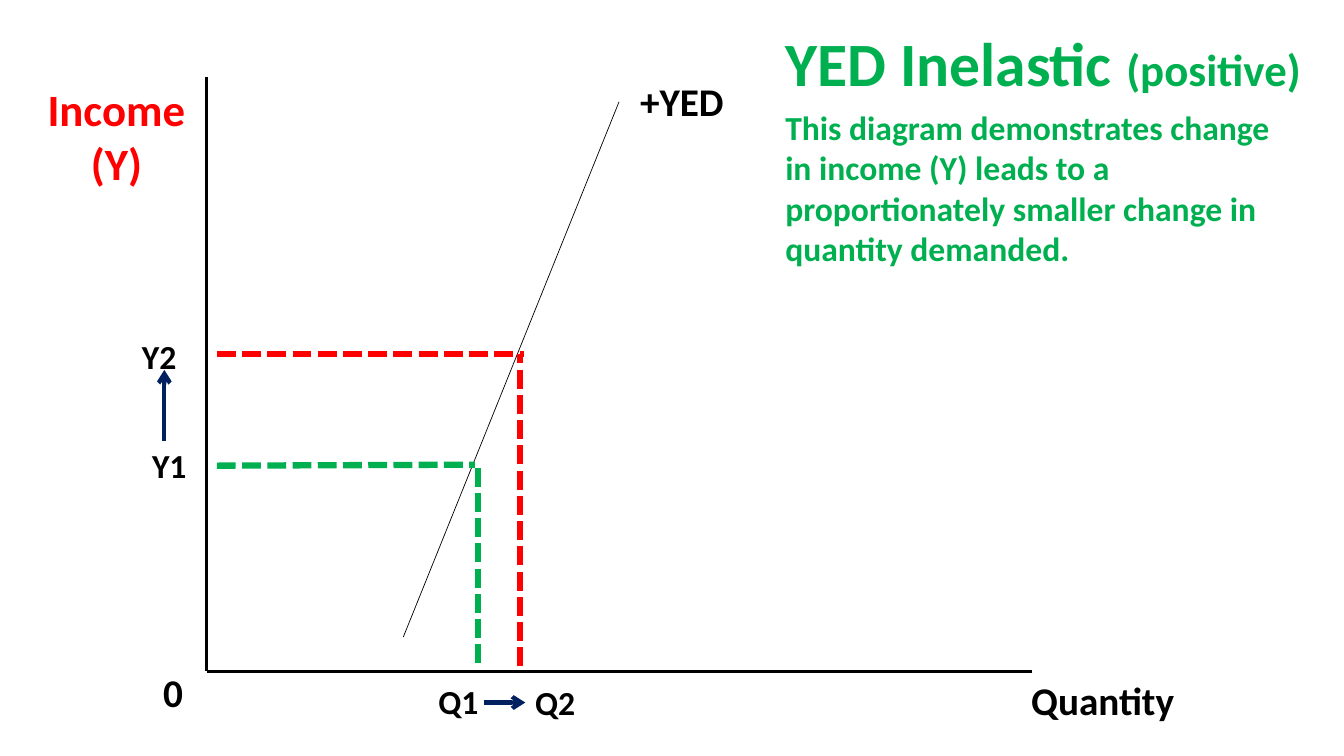
from lxml import etree
from pptx import Presentation
from pptx.dml.color import RGBColor
from pptx.enum.dml import MSO_LINE
from pptx.enum.shapes import MSO_CONNECTOR
from pptx.enum.text import MSO_ANCHOR, PP_ALIGN
from pptx.oxml.ns import qn
from pptx.util import Inches, Pt

STRAIGHT = MSO_CONNECTOR.STRAIGHT
DASHED = MSO_LINE.SQUARE_DOT
LEFT, CENTER = PP_ALIGN.LEFT, PP_ALIGN.CENTER
TOP = MSO_ANCHOR.TOP
FONT = "Calibri"
COLORS = {"black": "000000", "red": "FF0000", "green": "00B050", "navy": "002060"}


def rgb(name):
    """Return the named colour."""
    return RGBColor.from_string(COLORS[name])


def set_font(font, size, color):
    """Apply the bold slide font."""
    font.name = FONT
    font.size = Pt(size)
    font.bold = True
    font.color.rgb = rgb(color)


def add_label(s, text, box, size, color="black", align=LEFT):
    """Add a wrapped text box."""
    tf = s.shapes.add_textbox(*map(Inches, box)).text_frame
    tf.word_wrap = True
    p = tf.paragraphs[0]
    p.text = text
    p.alignment = align
    set_font(p.font, size, color)


def add_line(s, start, end, color, width, dash=None, arrow=False):
    """Add a straight line, optionally dashed or with an arrowhead."""
    line = s.shapes.add_connector(STRAIGHT, *map(Inches, start + end))
    line.line.color.rgb = rgb(color)
    line.line.width = Pt(width)
    if dash:
        line.line.dash_style = dash
    if arrow:
        etree.SubElement(line.line._get_or_add_ln(), qn("a:tailEnd"), type="arrow")
    etree.SubElement(line._element.spPr, qn("a:effectLst"))


def add_title(s, parts, box, color):
    """Place the title and fill it with runs of differing size."""
    title = s.shapes.title
    title.left, title.top, title.width, title.height = map(Inches, box)
    tf = title.text_frame
    tf.word_wrap = True
    tf.vertical_anchor = TOP
    p = tf.paragraphs[0]
    p.alignment = LEFT
    p.line_spacing = 0.9
    for text, size in parts:
        r = p.add_run()
        r.text = text
        set_font(r.font, size, color)


def main():
    """Build the income elasticity slide."""
    prs = Presentation()
    prs.slide_width, prs.slide_height = Inches(13.33), Inches(7.5)
    s = prs.slides.add_slide(prs.slide_layouts[5])

    origin = (2.05, 6.66)
    add_line(s, (2.05, 0.76), origin, "black", 2.5)
    add_line(s, (10.24, 6.66), origin, "black", 2.5)
    add_label(s, "Income\n(Y)", (0.37, 0.76, 1.57, 1.18), 32, "red", CENTER)
    add_label(s, "Quantity", (10.13, 6.66, 2.94, 0.57), 28)
    add_label(s, "0", (1.52, 6.58, 0.42, 0.57), 28)

    add_line(s, (6.14, 1.01), (4, 6.32), "black", 0.5)
    add_label(s, "+YED", (6.25, 0.72, 1.37, 0.57), 28)

    guides = [
        ((2.15, 4.62), (4.71, 4.61), "green"),
        ((2.15, 3.51), (5.2, 3.51), "red"),
        ((5.16, 6.61), (5.16, 3.51), "red"),
        ((4.74, 6.58), (4.74, 4.62), "green"),
    ]
    for start, end, color in guides:
        add_line(s, start, end, color, 4.5, dash=DASHED)

    ticks = [
        ("Y2", 1.31, 3.28, 0.84),
        ("Y1", 1.41, 4.36, 0.63),
        ("Q2", 5.21, 6.72, 0.84),
        ("Q1", 4.25, 6.71, 0.76),
    ]
    for text, left, top, width in ticks:
        add_label(s, text, (left, top, width, 0.5), 24)

    add_line(s, (1.63, 4.38), (1.63, 3.67), "navy", 3, arrow=True)
    add_line(s, (4.8, 6.97), (5.21, 6.97), "navy", 3, arrow=True)

    title_parts = [("YED Inelastic ", 44), ("(positive)", 32)]
    add_title(s, title_parts, (7.69, 0.28, 5.64, 1.45), "green")
    explanation = (
        "This diagram demonstrates change in income (Y) leads to a "
        "proportionately smaller change in quantity demanded."
    )
    add_label(s, explanation, (7.69, 1.01, 5.28, 1.72), 24, "green")
    prs.save("out.pptx")


if __name__ == "__main__":
    main()
